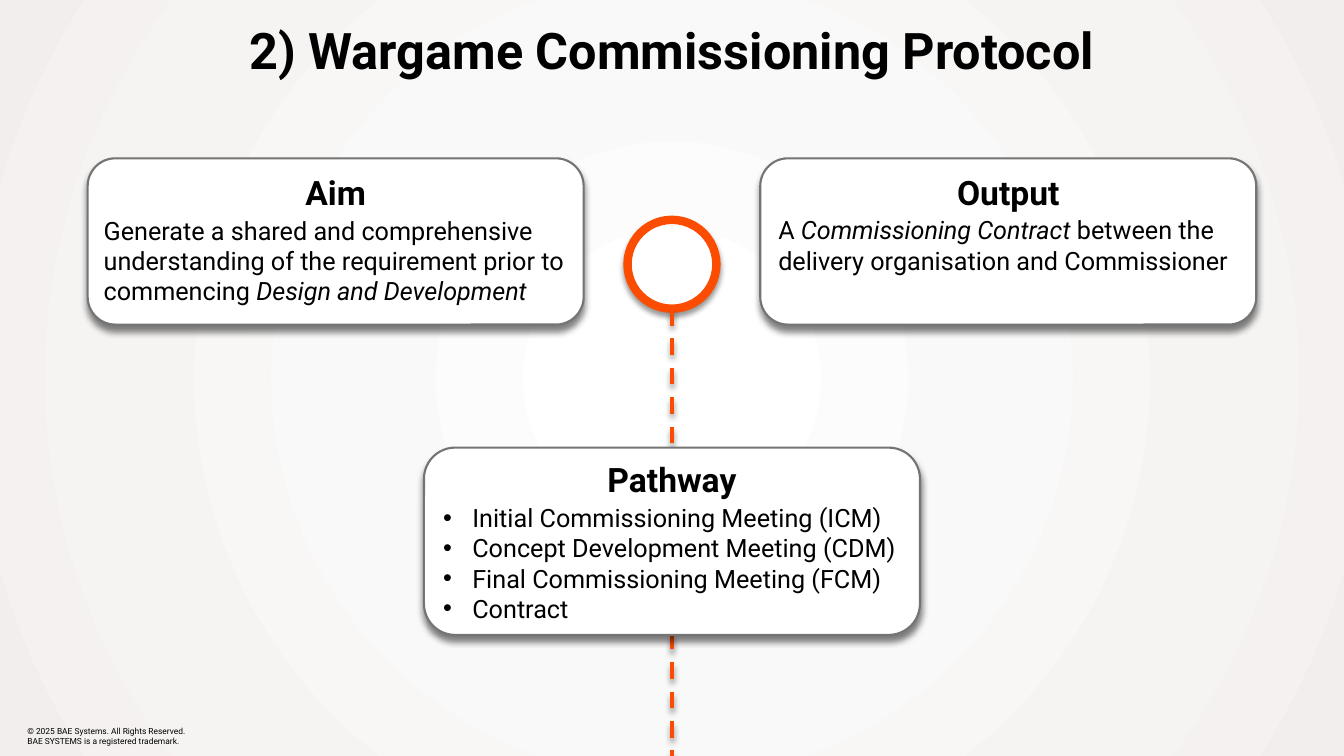
from lxml import etree
from pptx import Presentation, util as u
from pptx.dml.color import RGBColor
from pptx.enum import dml, shapes, text
from pptx.oxml import parse_xml
from pptx.oxml.ns import nsdecls, qn

COLORS = {"black": "000000", "white": "FFFFFF", "orange": "FC4C02", "grey": "747474"}
BACKGROUND_STOPS = [(8, "FFFFFF"), (42, "FAF9F9"), (72, "F6F4F3"), (100, "F2EEED")]
SLIDE_WIDTH, SLIDE_HEIGHT = 33.87, 19.05
CENTER = SLIDE_WIDTH / 2


def style_outline(shape, color, width, opacity, blur, distance):
    """Set the line and a shadow that falls straight down."""
    shape.line.color.rgb = RGBColor.from_string(COLORS[color])
    shape.line.width = u.Pt(width)
    shape.element.spPr.append(parse_xml(
        f'<a:effectLst {nsdecls("a")}><a:outerShdw blurRad="{u.Pt(blur)}" '
        f'dist="{u.Pt(distance)}" dir="5400000" algn="t" rotWithShape="0">'
        f'<a:srgbClr val="{COLORS["black"]}"><a:alpha val="{opacity * 1000}"/>'
        '</a:srgbClr></a:outerShdw></a:effectLst>'))


def style_font(font, size, bold=False):
    font.name = "Roboto"
    font.size = u.Pt(size)
    font.bold = bold
    font.color.rgb = RGBColor.from_string(COLORS["black"])


presentation = Presentation()
presentation.slide_width = u.Cm(SLIDE_WIDTH)
presentation.slide_height = u.Cm(SLIDE_HEIGHT)
slide = presentation.slides.add_slide(presentation.slide_layouts[6])

# Background: circular gradient from the centre
slide.background.fill.gradient()
gradient = slide.element.find(".//" + qn("a:gradFill"))
for child in list(gradient):
    gradient.remove(child)
stop_list = etree.SubElement(gradient, qn("a:gsLst"))
for position, color in BACKGROUND_STOPS:
    stop = etree.SubElement(stop_list, qn("a:gs"), pos=str(position * 1000))
    etree.SubElement(stop, qn("a:srgbClr"), val=color)
circle_path = etree.SubElement(gradient, qn("a:path"), path="circle")
etree.SubElement(circle_path, qn("a:fillToRect"), l="50000", t="50000", r="50000", b="50000")

# Copyright lines
footer = slide.shapes.add_textbox(u.Cm(0.69), u.Cm(18.14), u.Cm(4.55), u.Cm(0.81))
frame = footer.text_frame
frame.word_wrap = True
frame.vertical_anchor = text.MSO_ANCHOR.MIDDLE
frame.margin_left = frame.margin_right = frame.margin_top = frame.margin_bottom = 0
frame.text = ("© 2025 BAE Systems. All Rights Reserved.\n"
              "BAE SYSTEMS is a registered trademark.")
for paragraph in frame.paragraphs:
    style_font(paragraph.runs[0].font, 6)

# Title
title = slide.shapes.add_textbox(0, u.Cm(0.36), u.Cm(SLIDE_WIDTH), u.Cm(1.8))
title.text_frame.word_wrap = True
title.text_frame.text = "2) Wargame Commissioning Protocol"
paragraph = title.text_frame.paragraphs[0]
paragraph.alignment = text.PP_ALIGN.CENTER
style_font(paragraph.runs[0].font, 36, bold=True)

# Ring and dashed path
DIAMETER, RING_TOP = 2.24, 5.54
ring = slide.shapes.add_shape(shapes.MSO_SHAPE.OVAL, u.Cm(CENTER - DIAMETER / 2),
                              u.Cm(RING_TOP), u.Cm(DIAMETER), u.Cm(DIAMETER))
ring.fill.solid()
ring.fill.fore_color.rgb = RGBColor.from_string(COLORS["white"])
style_outline(ring, "orange", 6, 40, 4, 3)

path_line = slide.shapes.add_connector(
    shapes.MSO_CONNECTOR.STRAIGHT, u.Cm(CENTER), u.Cm(RING_TOP + DIAMETER),
    u.Cm(CENTER), u.Cm(SLIDE_HEIGHT))
path_line.line.dash_style = dml.MSO_LINE.DASH
style_outline(path_line, "orange", 3, 40, 4, 3)

# Cards: heading, left, top, height, anchor, side margin, top margin, bulleted,
# paragraphs of (words, italic) runs
CARD_WIDTH, CARD_LEFT, CARD_TOP, INDENT = 12.5, 2.21, 3.99, 0.74
MIDDLE, TOP = text.MSO_ANCHOR.MIDDLE, text.MSO_ANCHOR.TOP
cards = [
    ("Aim", CARD_LEFT, CARD_TOP, 4.19, MIDDLE, 0.2, 0, False, [
        [("Generate a shared and comprehensive understanding of the requirement "
          "prior to commencing ", False), ("Design and Development", True)]]),
    ("Output", SLIDE_WIDTH - CARD_LEFT - CARD_WIDTH, CARD_TOP, 4.19, TOP, 0.25, 0.13, False, [
        [("A ", False), ("Commissioning Contract ", True),
         ("between the delivery organisation and Commissioner", False)]]),
    ("Pathway", CENTER - CARD_WIDTH / 2, 11.28, 4.72, MIDDLE, 0.25, 0.13, True, [
        [("Initial Commissioning Meeting (ICM)", False)],
        [("Concept Development Meeting (CDM)", False)],
        [("Final Commissioning Meeting (FCM)", False)],
        [("Contract", False)]]),
]
for heading, left, top, height, anchor, side, margin_top, bulleted, body in cards:
    card = slide.shapes.add_shape(shapes.MSO_SHAPE.ROUNDED_RECTANGLE, u.Cm(left),
                                  u.Cm(top), u.Cm(CARD_WIDTH), u.Cm(height))
    card.fill.solid()
    card.fill.fore_color.rgb = RGBColor.from_string(COLORS["white"])
    style_outline(card, "grey", 1.5, 50, 5, 4)

    frame = card.text_frame
    frame.word_wrap = True
    frame.vertical_anchor = anchor
    frame.margin_left = frame.margin_right = u.Cm(side)
    frame.margin_top = u.Cm(margin_top)
    frame.margin_bottom = u.Cm(0.13)
    frame.text = heading
    paragraph = frame.paragraphs[0]
    paragraph.alignment = text.PP_ALIGN.CENTER
    paragraph.space_after = u.Pt(2)
    style_font(paragraph.runs[0].font, 24, bold=True)

    for runs in body:
        paragraph = frame.add_paragraph()
        paragraph.alignment = text.PP_ALIGN.LEFT
        if bulleted:
            properties = paragraph._p.get_or_add_pPr()
            properties.set("marL", str(u.Cm(INDENT)))
            properties.set("indent", str(-u.Cm(INDENT)))
            etree.SubElement(properties, qn("a:buFont"), typeface="Arial")
            etree.SubElement(properties, qn("a:buChar"), char="•")
        for words, italic in runs:
            run = paragraph.add_run()
            run.text = words
            style_font(run.font, 18)
            run.font.italic = italic

presentation.save("out.pptx")
